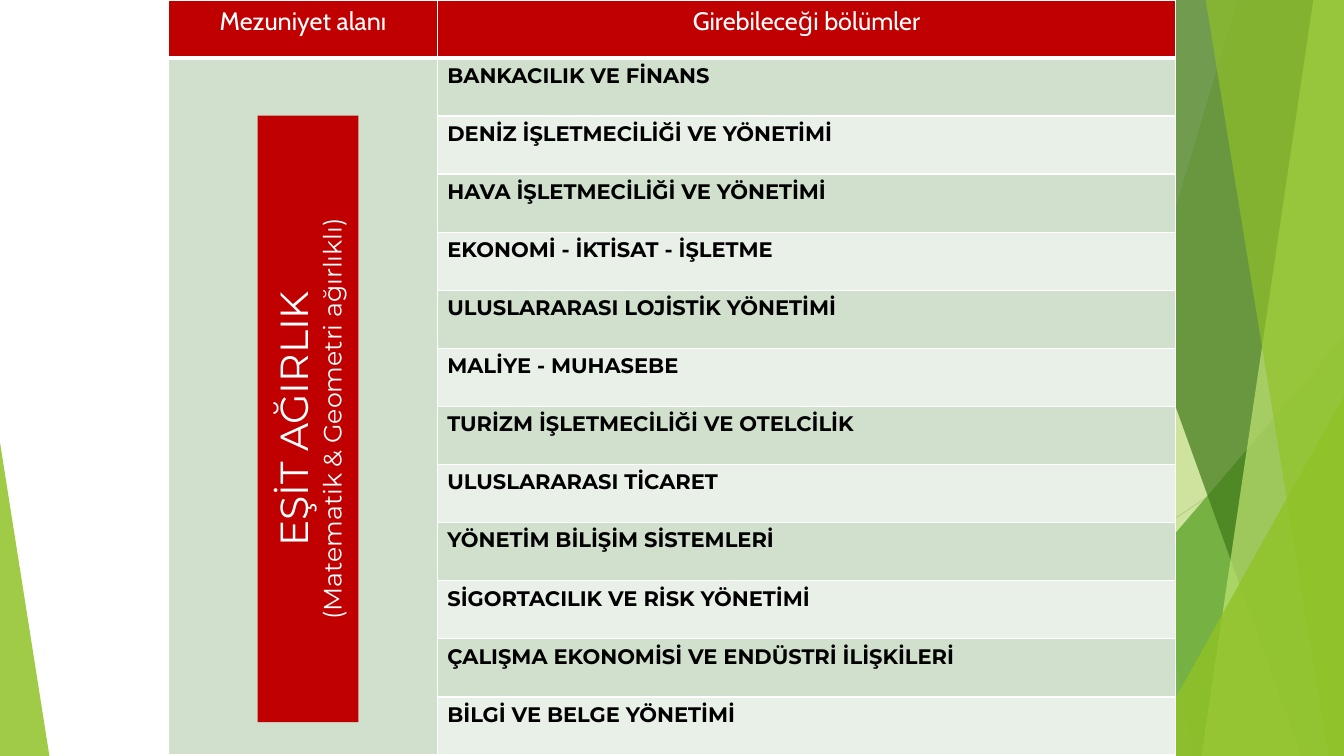
from lxml import etree
from pptx import Presentation, util as u
from pptx.dml.color import RGBColor
from pptx.enum import shapes, text
from pptx.oxml.ns import qn

WHITE = RGBColor(0xFF, 0xFF, 0xFF)
BLACK = RGBColor(0, 0, 0)
RED = RGBColor(0xC0, 0, 0)
SAGE = RGBColor(0xD1, 0xDF, 0xCD)
PALE_SAGE = RGBColor(0xE9, 0xF0, 0xE8)
LIME = RGBColor(0x90, 0xC2, 0x26)
LEAF = RGBColor(0x54, 0xA0, 0x21)
FOREST = RGBColor(0x3F, 0x78, 0x19)
LIGHT_LIME = RGBColor(0xC0, 0xE4, 0x74)
GREY = RGBColor(0xBF, 0xBF, 0xBF)
LIGHT_GREY = RGBColor(0xD9, 0xD9, 0xD9)

WIDTH, HEIGHT = 960, 540
HEADER_HEIGHT, ROW_HEIGHT = 40.8, 41.52
HEADINGS = ("Mezuniyet alanı", "Girebileceği bölümler")
DEPARTMENTS = (
    "BANKACILIK VE FİNANS",
    "DENİZ İŞLETMECİLİĞİ VE YÖNETİMİ",
    "HAVA İŞLETMECİLİĞİ VE YÖNETİMİ",
    "EKONOMİ - İKTİSAT - İŞLETME",
    "ULUSLARARASI LOJİSTİK YÖNETİMİ",
    "MALİYE - MUHASEBE",
    "TURİZM İŞLETMECİLİĞİ VE OTELCİLİK",
    "ULUSLARARASI TİCARET",
    "YÖNETİM BİLİŞİM SİSTEMLERİ",
    "SİGORTACILIK VE RİSK YÖNETİMİ",
    "ÇALIŞMA EKONOMİSİ VE ENDÜSTRİ İLİŞKİLERİ",
    "BİLGİ VE BELGE YÖNETİMİ",
)


class Painter:
    heading = {"name": "Cabin", "size": u.Pt(18), "color": WHITE}
    department = {"name": "Montserrat", "size": u.Pt(15), "color": BLACK, "bold": True}
    field = {"name": "Montserrat", "size": u.Pt(28), "color": WHITE}
    field_note = {**field, "size": u.Pt(18)}

    def __init__(self, slide):
        self.slide = slide

    def words(self, paragraph, wording, style, align=None):
        run = paragraph.add_run()
        run.text = wording
        paragraph.alignment = align
        for key, value in style.items():
            if key == "color":
                run.font.color.rgb = value
            else:
                setattr(run.font, key, value)

    def paint(self, shape, color, opacity=100):
        shape.shadow.inherit = False
        shape.line.fill.background()
        shape.fill.solid()
        shape.fill.fore_color.rgb = color
        if opacity < 100:
            tint = shape._element.spPr.find(qn("a:solidFill")).find(qn("a:srgbClr"))
            etree.SubElement(tint, qn("a:alpha"), val=str(opacity * 1000))

    def line(self, start, end, color):
        ray = self.slide.shapes.add_connector(
            shapes.MSO_CONNECTOR.STRAIGHT, *map(u.Pt, start + end))
        ray.line.color.rgb = color
        ray.line.width = u.Pt(0.75)
        etree.SubElement(ray._element.spPr, qn("a:effectLst"))

    def blade(self, top_x, bottom_x, color, opacity):
        """A full-height facet reaching the right edge of the slide."""
        top = u.Pt(-0.6)
        outline = self.slide.shapes.build_freeform(u.Pt(top_x), top)
        outline.add_line_segments([
            (u.Pt(WIDTH), top), (u.Pt(WIDTH), u.Pt(HEIGHT)), (u.Pt(bottom_x), u.Pt(HEIGHT))])
        self.paint(outline.convert_to_shape(), color, opacity)

    def corner(self, left, top, width, apex, color, opacity):
        """A triangle standing on the bottom edge of the slide."""
        triangle = self.slide.shapes.add_shape(
            shapes.MSO_SHAPE.ISOSCELES_TRIANGLE,
            *map(u.Pt, (left, top, width, HEIGHT - top)))
        triangle.adjustments[0] = apex
        self.paint(triangle, color, opacity)

    def banner(self, left, top, width, height, rotation, lines):
        box = self.slide.shapes.add_shape(
            shapes.MSO_SHAPE.RECTANGLE, *map(u.Pt, (left, top, width, height)))
        box.rotation = rotation
        self.paint(box, RED)
        frame = box.text_frame
        frame.word_wrap = True
        frame.vertical_anchor = text.MSO_ANCHOR.MIDDLE
        for index, (wording, style) in enumerate(lines):
            paragraph = frame.add_paragraph() if index else frame.paragraphs[0]
            self.words(paragraph, wording, style, text.PP_ALIGN.CENTER)

    def cell(self, cell, fill, bottom=1):
        props = cell._tc.get_or_add_tcPr()
        for side, width in (("L", 1), ("R", 1), ("T", 1), ("B", bottom)):
            border = etree.SubElement(props, qn("a:ln" + side), w=str(int(u.Pt(width))))
            solid = etree.SubElement(border, qn("a:solidFill"))
            etree.SubElement(solid, qn("a:srgbClr"), val=str(WHITE))
        cell.fill.solid()
        cell.fill.fore_color.rgb = fill

    def table(self, left, top, widths, headings, departments):
        count = len(departments)
        grid = self.slide.shapes.add_table(
            count + 1, len(widths), u.Pt(left), u.Pt(top), u.Pt(sum(widths)),
            u.Pt(HEADER_HEIGHT + count * ROW_HEIGHT)).table
        for column, width in zip(grid.columns, widths):
            column.width = u.Pt(width)
        for index, row in enumerate(grid.rows):
            row.height = u.Pt(ROW_HEIGHT if index else HEADER_HEIGHT)

        for column, wording in enumerate(headings):
            heading = grid.cell(0, column)
            self.cell(heading, RED, bottom=3)
            self.words(heading.text_frame.paragraphs[0], wording, self.heading,
                       text.PP_ALIGN.CENTER)
        for row, wording in enumerate(departments, 1):
            self.cell(grid.cell(row, 0), SAGE)
            department = grid.cell(row, 1)
            self.cell(department, SAGE if row % 2 else PALE_SAGE)
            self.words(department.text_frame.paragraphs[0], wording, self.department)
        grid.cell(1, 0).merge(grid.cell(count, 0))


def main():
    deck = Presentation()
    deck.slide_width, deck.slide_height = u.Pt(WIDTH), u.Pt(HEIGHT)
    painter = Painter(deck.slides.add_slide(deck.slide_layouts[6]))

    # Green facets behind the table
    painter.line((738, 0), (834, HEIGHT), GREY)
    painter.line((WIDTH, 290), (584.6, HEIGHT), LIGHT_GREY)
    painter.blade(884.2, 722.9, LIME, 30)
    painter.blade(756, 851.8, LIME, 20)
    painter.corner(703.6, 240, 256.4, 1, LEAF, 72)
    painter.blade(735.1, 929.5, FOREST, 70)
    painter.blade(938.2, 858.2, LIGHT_LIME, 70)
    painter.blade(861.1, 949, LIME, 65)
    painter.corner(816.6, 283, 143.4, 1, LIME, 80)
    painter.corner(0, 316, 35.3, 0, LIME, 85)

    # Departments open to the field
    painter.table(120.4, 0.5, (192, 527.5), HEADINGS, DEPARTMENTS)

    # Field name, reading upwards
    painter.banner(3.5, 263.2, 433.2, 72, 270, (
        ("EŞİT AĞIRLIK", painter.field),
        ("(Matematik & Geometri ağırlıklı)", painter.field_note),
    ))

    deck.save("out.pptx")


if __name__ == "__main__":
    main()
